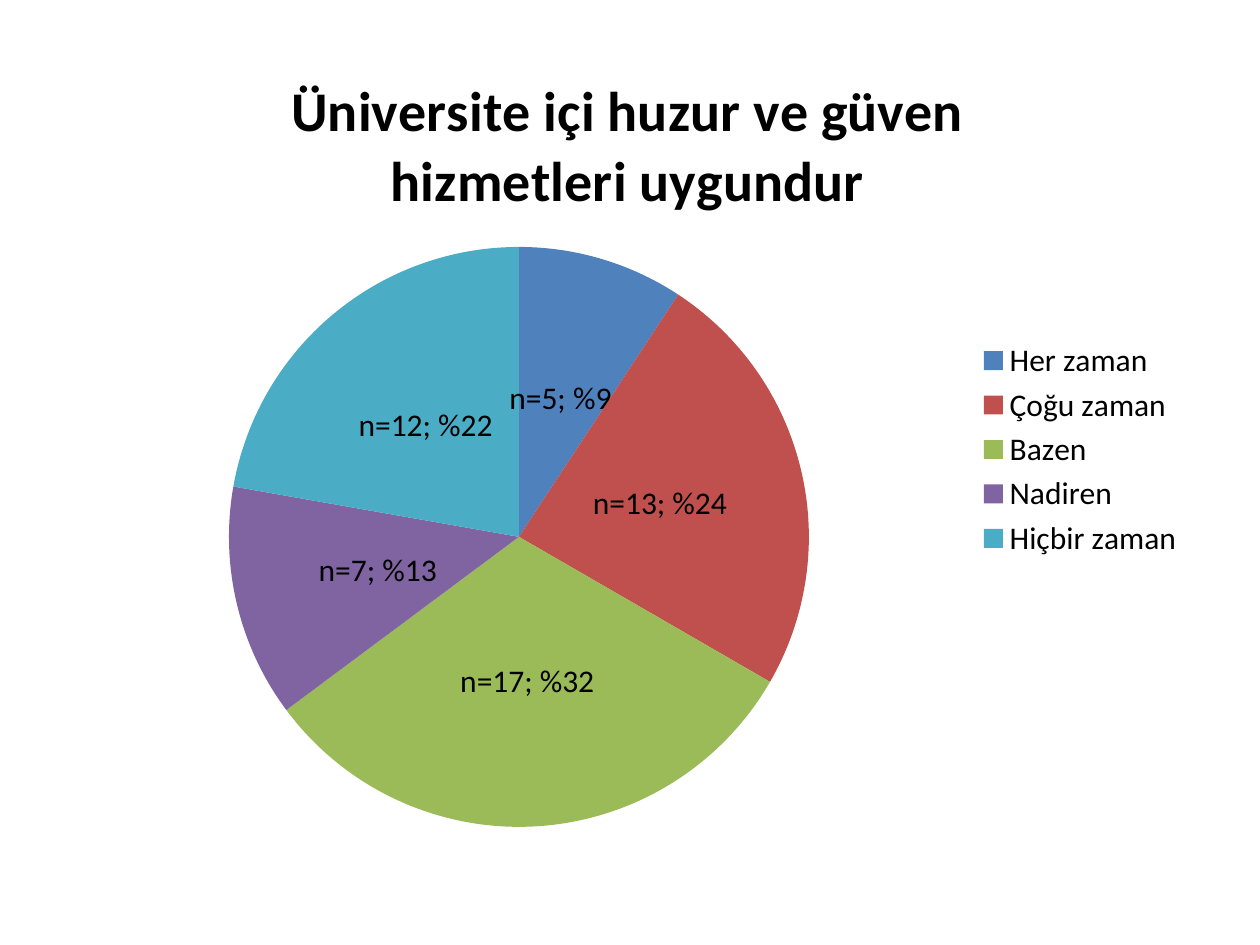
from lxml import etree
from pptx import Presentation
from pptx import util as u
from pptx.chart.data import CategoryChartData
from pptx.dml.color import RGBColor
from pptx.enum import chart as c
from pptx.oxml.ns import qn

PX = u.Inches(1) // 126
FONT = "Calibri"
TITLE = "Üniversite içi huzur ve güven hizmetleri uygundur"
COLORS = {
    "text": "000000",
    "Her zaman": "4F81BD",
    "Çoğu zaman": "C0504D",
    "Bazen": "9BBB59",
    "Nadiren": "8064A2",
    "Hiçbir zaman": "4BACC6",
}
ANSWERS = [
    ("Her zaman", 5, 9),
    ("Çoğu zaman", 13, 24),
    ("Bazen", 17, 32),
    ("Nadiren", 7, 13),
    ("Hiçbir zaman", 12, 22),
]


def style_font(font, size, bold=False):
    font.name = FONT
    font.size = u.Pt(size)
    font.bold = bold
    font.color.rgb = RGBColor.from_string(COLORS["text"])


def set_layout(part, position, **settings):
    """Place a chart part at fixed fractions of the chart frame."""
    for old in part.findall(qn("c:layout")):
        part.remove(old)
    layout = etree.Element(qn("c:layout"))
    manual = etree.SubElement(layout, qn("c:manualLayout"))
    for name, value in {**settings, "xMode": "edge", "yMode": "edge", **position}.items():
        etree.SubElement(manual, qn(f"c:{name}")).set("val", str(value))
    text = part.find(qn("c:tx"))
    part.insert(0 if text is None else 1, layout)


def style_slices(plot):
    plot.vary_by_categories = True
    plot.has_data_labels = True
    labels = plot.data_labels
    labels.show_value = labels.show_percentage = True
    labels.position = c.XL_LABEL_POSITION.CENTER
    style_font(labels.font, 18)
    series = plot.series[0]
    for index, (answer, count, percent) in enumerate(ANSWERS):
        point = series.points[index]
        point.format.fill.solid()
        point.format.fill.fore_color.rgb = RGBColor.from_string(COLORS[answer])
        label = point.data_label
        span = label.text_frame.paragraphs[0].add_run()
        span.text = f"n={count}; %{percent}"
        style_font(span.font, 18)
        label.position = c.XL_LABEL_POSITION.CENTER
    series.data_labels.show_value = True
    series.data_labels.position = c.XL_LABEL_POSITION.CENTER
    for flag in series._element.iter(qn("c:showPercent")):
        flag.set("val", "1")


def add_answer_pie(page, left, top, width, height):
    data = CategoryChartData()
    data.categories = [answer for answer, _, _ in ANSWERS]
    data.add_series(TITLE, [count for _, count, _ in ANSWERS])
    box = [length * PX for length in (left, top, width, height)]
    chart = page.shapes.add_chart(c.XL_CHART_TYPE.PIE, *box, data).chart
    style_font(chart.font, 18)

    chart.has_title = True
    chart.chart_title.include_in_layout = False
    para = chart.chart_title.text_frame.paragraphs[0]
    para.text = TITLE
    style_font(para.runs[0].font, 32, bold=True)

    chart.has_legend = True
    chart.legend.position = c.XL_LEGEND_POSITION.RIGHT
    chart.legend.include_in_layout = False
    style_font(chart.legend.font, 18)

    style_slices(chart.plots[0])
    title_place = {"x": 218 / width, "y": 6 / height}
    pie_place = {"x": 166 / width, "y": 192 / height, "w": 580 / width, "h": 580 / height}
    set_layout(chart.chart_title._element, title_place)
    set_layout(chart._chartSpace.chart.plotArea, pie_place, layoutTarget="inner")


def main():
    deck = Presentation()
    deck.slide_width, deck.slide_height = u.Inches(10), u.Inches(7.5)
    page = deck.slides.add_slide(deck.slide_layouts[6])
    add_answer_pie(page, 63, 55, 1134, 789)
    deck.save("out.pptx")


if __name__ == "__main__":
    main()
